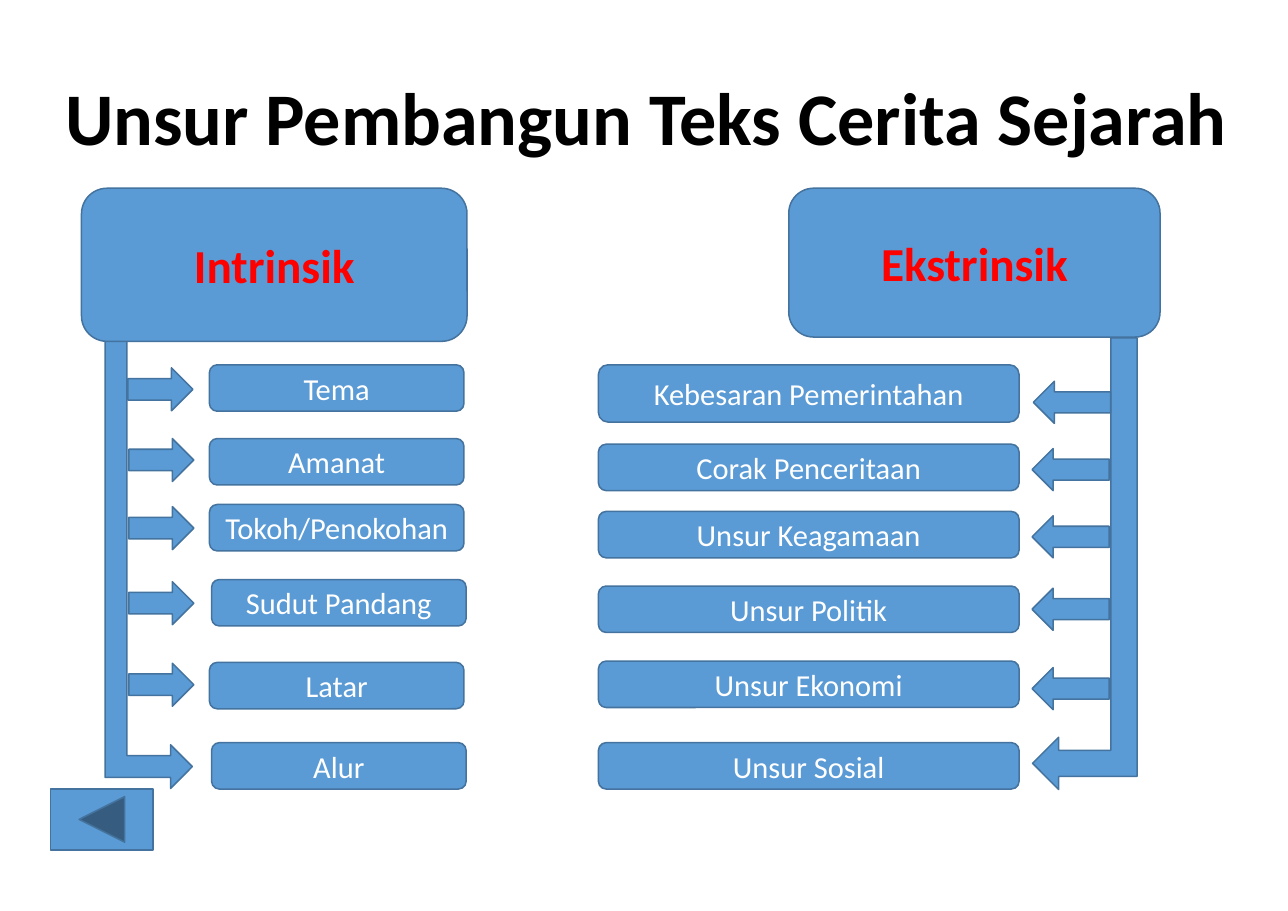
from dataclasses import dataclass

from pptx import Presentation
from pptx import util as u
from pptx.dml.color import RGBColor
from pptx.enum import shapes, text

SHAPE = shapes.MSO_SHAPE


@dataclass(frozen=True)
class Theme:
    font: str = "Calibri"
    fill: str = "5B9BD5"
    outline: str = "43739E"
    title_color: str = "000000"
    heading_color: str = "FF0000"
    label_color: str = "FFFFFF"
    title_size: float = 48.5
    heading_size: float = 30.9
    label_size: float = 19.9


class Diagram:
    def __init__(self, slide, theme):
        self.slide = slide
        self.theme = theme

    def add_words(self, shape, words, size, color, bold=False):
        frame = shape.text_frame
        frame.word_wrap = True
        frame.vertical_anchor = text.MSO_ANCHOR.MIDDLE
        frame.margin_left = frame.margin_right = u.Cm(0.1)
        paragraph = frame.paragraphs[0]
        paragraph.text = words
        paragraph.alignment = text.PP_ALIGN.CENTER
        paragraph.font.name = self.theme.font
        paragraph.font.size = u.Pt(size)
        paragraph.font.bold = bold
        paragraph.font.color.rgb = RGBColor.from_string(color)
        return paragraph

    def title(self, words, box):
        shape = self.slide.shapes.add_textbox(*map(u.Cm, box))
        paragraph = self.add_words(shape, words, self.theme.title_size, self.theme.title_color, True)
        paragraph.line_spacing = 0.9

    def block(self, kind, box):
        shape = self.slide.shapes.add_shape(kind, *map(u.Cm, box))
        shape.shadow.inherit = False
        shape.fill.solid()
        shape.fill.fore_color.rgb = RGBColor.from_string(self.theme.fill)
        shape.line.color.rgb = RGBColor.from_string(self.theme.outline)
        shape.line.width = u.Pt(1)
        return shape

    def arrow(self, kind, box, flipped, rotation=0):
        shape = self.block(kind, box)
        shape.rotation = rotation
        if flipped:
            shape._element.spPr.xfrm.set("flipH", "1")

    def heading(self, words, box):
        shape = self.block(SHAPE.ROUNDED_RECTANGLE, box)
        self.add_words(shape, words, self.theme.heading_size, self.theme.heading_color, True)

    def label(self, words, box):
        shape = self.block(SHAPE.ROUNDED_RECTANGLE, box)
        self.add_words(shape, words, self.theme.label_size, self.theme.label_color)

    def branch(self, group):
        flipped = group["flipped"]
        self.arrow(SHAPE.BENT_UP_ARROW, group["trunk"], flipped, 270 if flipped else 90)
        for left, top in group["arrows"]:
            self.arrow(SHAPE.RIGHT_ARROW, (left, top, *group["arrow_size"]), flipped)
        self.heading(group["heading"], group["heading_box"])
        for words, left, top, height in group["labels"]:
            self.label(words, (left, top, group["label_width"], height))


INTRINSIC = {
    "flipped": False,
    "heading": "Intrinsik",
    "heading_box": (1.88, 4.34, 8.89, 3.53),
    "trunk": (-1.93, 11.81, 10.72, 2.01),
    "arrow_size": (1.5, 0.99),
    "arrows": [(2.95, 8.48), (2.97, 10.11), (2.97, 11.68), (2.97, 13.41), (2.97, 15.29)],
    "label_width": 5.87,
    "labels": [
        ("Tema", 4.83, 8.41, 1.07),
        ("Amanat", 4.83, 10.11, 1.07),
        ("Tokoh/Penokohan", 4.83, 11.63, 1.07),
        ("Sudut Pandang", 4.88, 13.36, 1.07),
        ("Latar", 4.83, 15.27, 1.07),
        ("Alur", 4.88, 17.12, 1.07),
    ],
}

EXTRINSIC = {
    "flipped": True,
    "heading": "Ekstrinsik",
    "heading_box": (18.19, 4.34, 8.56, 3.43),
    "trunk": (19.81, 11.79, 10.41, 2.41),
    "arrow_size": (1.78, 0.97),
    "arrows": [(23.83, 8.79), (23.8, 10.34), (23.8, 11.89), (23.8, 13.56), (23.8, 15.39)],
    "label_width": 9.7,
    "labels": [
        ("Kebesaran Pemerintahan", 13.8, 8.41, 1.32),
        ("Corak Penceritaan", 13.8, 10.24, 1.07),
        ("Unsur Keagamaan", 13.8, 11.79, 1.07),
        ("Unsur Politik", 13.8, 13.51, 1.07),
        ("Unsur Ekonomi", 13.8, 15.24, 1.07),
        ("Unsur Sosial", 13.8, 17.12, 1.07),
    ],
}


def main():
    presentation = Presentation()
    presentation.slide_width = u.Cm(29.7)
    presentation.slide_height = u.Cm(21)
    slide = presentation.slides.add_slide(presentation.slide_layouts[6])
    diagram = Diagram(slide, Theme())
    diagram.title("Unsur Pembangun Teks Cerita Sejarah", (1.17, 1.12, 27.46, 3.35))
    for group in (INTRINSIC, EXTRINSIC):
        diagram.branch(group)
    diagram.block(SHAPE.ACTION_BUTTON_BACK_OR_PREVIOUS, (1.17, 18.19, 2.36, 1.4))
    presentation.save("out.pptx")


if __name__ == "__main__":
    main()
